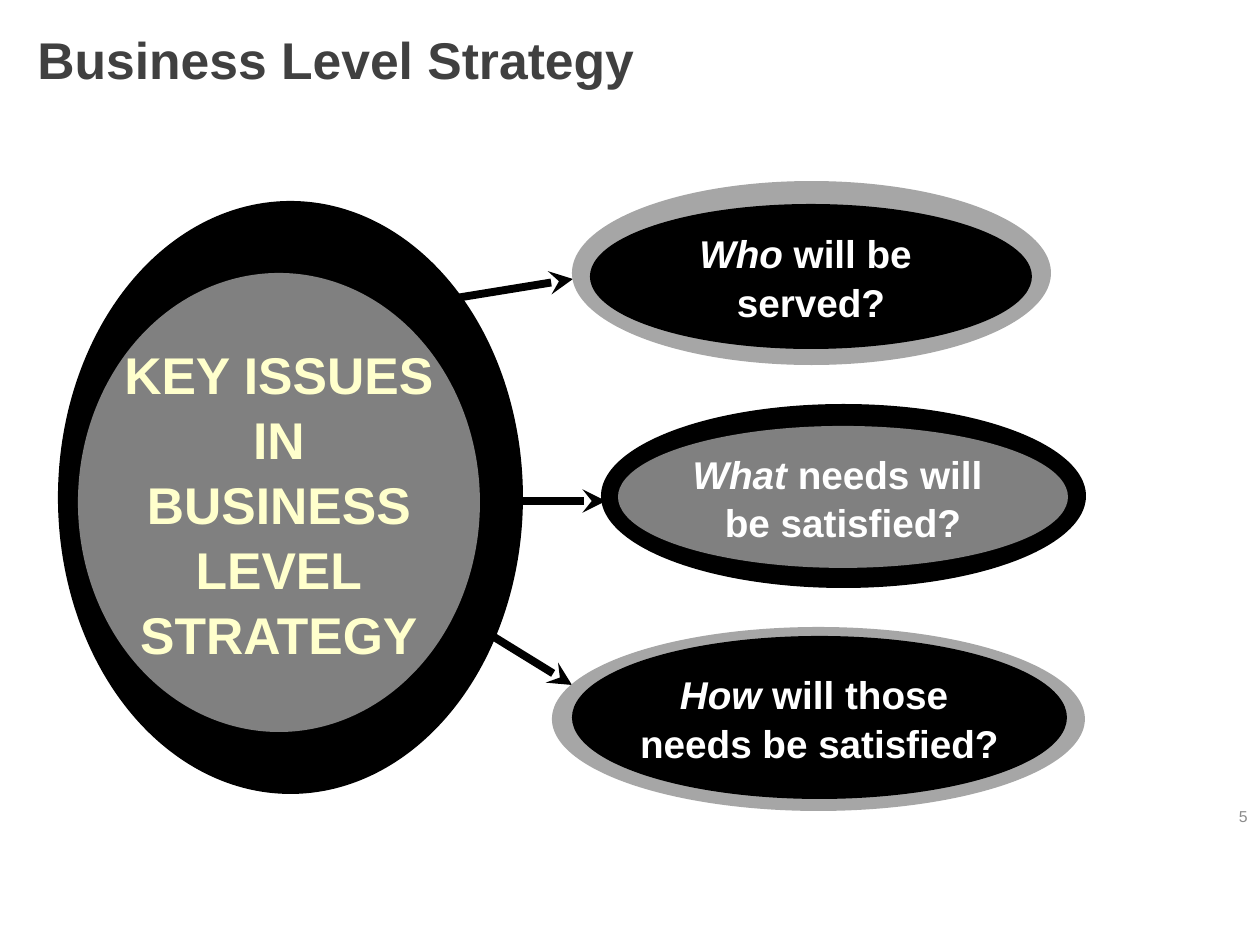
import pptx
import pptx.dml.color
import pptx.enum.shapes
import pptx.enum.text
import pptx.oxml.ns
import pptx.util
from dataclasses import dataclass
from lxml import etree

PX = 914400 // 126


@dataclass(frozen=True)
class Theme:
    """Colours, type sizes and font of the slide."""
    font: str = "Arial"
    black: str = "000000"
    grey: str = "808080"
    silver: str = "A6A6A6"
    title: str = "404040"
    number: str = "8C8C8C"
    cream: str = "FFFFCC"
    white: str = "FFFFFF"
    heading_size: float = 29.5
    question_size: float = 22.1
    number_size: float = 9
    arrow_width: float = 4.5


THEME = Theme()
ALIGN = pptx.enum.text.PP_ALIGN


def emu(lengths):
    """Turn px lengths into EMU."""
    return [v * PX for v in lengths]


def rgb(colour):
    """Return a colour object for a hex value."""
    return pptx.dml.color.RGBColor.from_string(colour)


def add_run(p, text, size, colour, **formats):
    """Add a run, with line breaks where the text has them."""
    values = {"name": THEME.font, "size": pptx.util.Pt(size), **formats}
    for i, line in enumerate(text.split("\n")):
        if i:
            p.add_line_break()
        r = p.add_run()
        r.text = line
        r.font.color.rgb = rgb(colour)
        for name, value in values.items():
            setattr(r.font, name, value)


def add_text(s, box, text, size, colour, align, spacing=1.0, **formats):
    """Add a one-paragraph text box anchored in the middle."""
    tf = s.shapes.add_textbox(*emu(box)).text_frame
    tf.word_wrap = True
    tf.vertical_anchor = pptx.enum.text.MSO_ANCHOR.MIDDLE
    p = tf.paragraphs[0]
    p.alignment, p.line_spacing = align, spacing
    add_run(p, text, size, colour, **formats)


def add_ellipse(group, box, colour):
    """Add a filled ellipse without outline."""
    sp = group.shapes.add_shape(pptx.enum.shapes.MSO_SHAPE.OVAL, *emu(box))
    sp.shadow.inherit = False
    sp.fill.solid()
    sp.fill.fore_color.rgb = rgb(colour)
    sp.line.fill.background()
    return sp


def add_ringed_ellipse(s, outer, ring, inner, fill, paragraphs, size, colour):
    """Add a group of two ellipses, with paragraphs of (text, italic) runs."""
    group = s.shapes.add_group_shape()
    add_ellipse(group, outer, ring)
    tf = add_ellipse(group, inner, fill).text_frame
    tf.word_wrap = False
    tf.vertical_anchor = pptx.enum.text.MSO_ANCHOR.MIDDLE
    for i, runs in enumerate(paragraphs):
        p = tf.add_paragraph() if i else tf.paragraphs[0]
        p.alignment, p.line_spacing = ALIGN.CENTER, 1.05
        for text, italic in runs:
            add_run(p, text, size, colour, bold=True, italic=italic)


def add_arrow(s, ends):
    """Add a thick line with a stealth arrowhead at its end."""
    kind = pptx.enum.shapes.MSO_CONNECTOR.STRAIGHT
    c = s.shapes.add_connector(kind, *emu(ends))
    c.line.color.rgb = rgb(THEME.black)
    c.line.width = pptx.util.Pt(THEME.arrow_width)
    qn = pptx.oxml.ns.qn
    etree.SubElement(c.line._get_or_add_ln(), qn("a:tailEnd"), type="stealth")
    etree.SubElement(c._element.spPr, qn("a:effectLst"))


def main():
    """Build and save the slide."""
    prs = pptx.Presentation()
    prs.slide_width, prs.slide_height = emu((1260, 945))
    s = prs.slides.add_slide(prs.slide_layouts[6])
    t = THEME

    add_text(s, (25, 26, 1071, 73), "Business Level Strategy",
             t.heading_size, t.title, ALIGN.LEFT, 0.9, bold=True)
    add_text(s, (1198, 799, 62, 34), "5", t.number_size, t.number, ALIGN.RIGHT)

    issues = ("KEY ISSUES\nIN\nBUSINESS", "LEVEL", "STRATEGY")
    add_ringed_ellipse(s, (58, 201, 465, 593), t.black, (78, 273, 402, 459), t.grey,
                       [[(text, False)] for text in issues], t.heading_size, t.cream)

    for ends in ((456, 298, 573, 279), (523, 501, 606, 501), (494, 637, 572, 685)):
        add_arrow(s, ends)

    questions = (
        ((572, 181, 479, 184), t.silver, (590, 204, 442, 145), t.black,
         "Who", " will be \nserved?"),
        ((601, 404, 485, 184), t.black, (618, 426, 450, 142), t.grey,
         "What", " needs will \nbe satisfied?"),
        ((552, 627, 533, 184), t.silver, (572, 636, 495, 163), t.black,
         "How", " will those \nneeds be satisfied?"),
    )
    for outer, ring, inner, fill, word, rest in questions:
        add_ringed_ellipse(s, outer, ring, inner, fill, [[(word, True), (rest, False)]],
                           t.question_size, t.white)

    prs.save("out.pptx")


if __name__ == "__main__":
    main()
